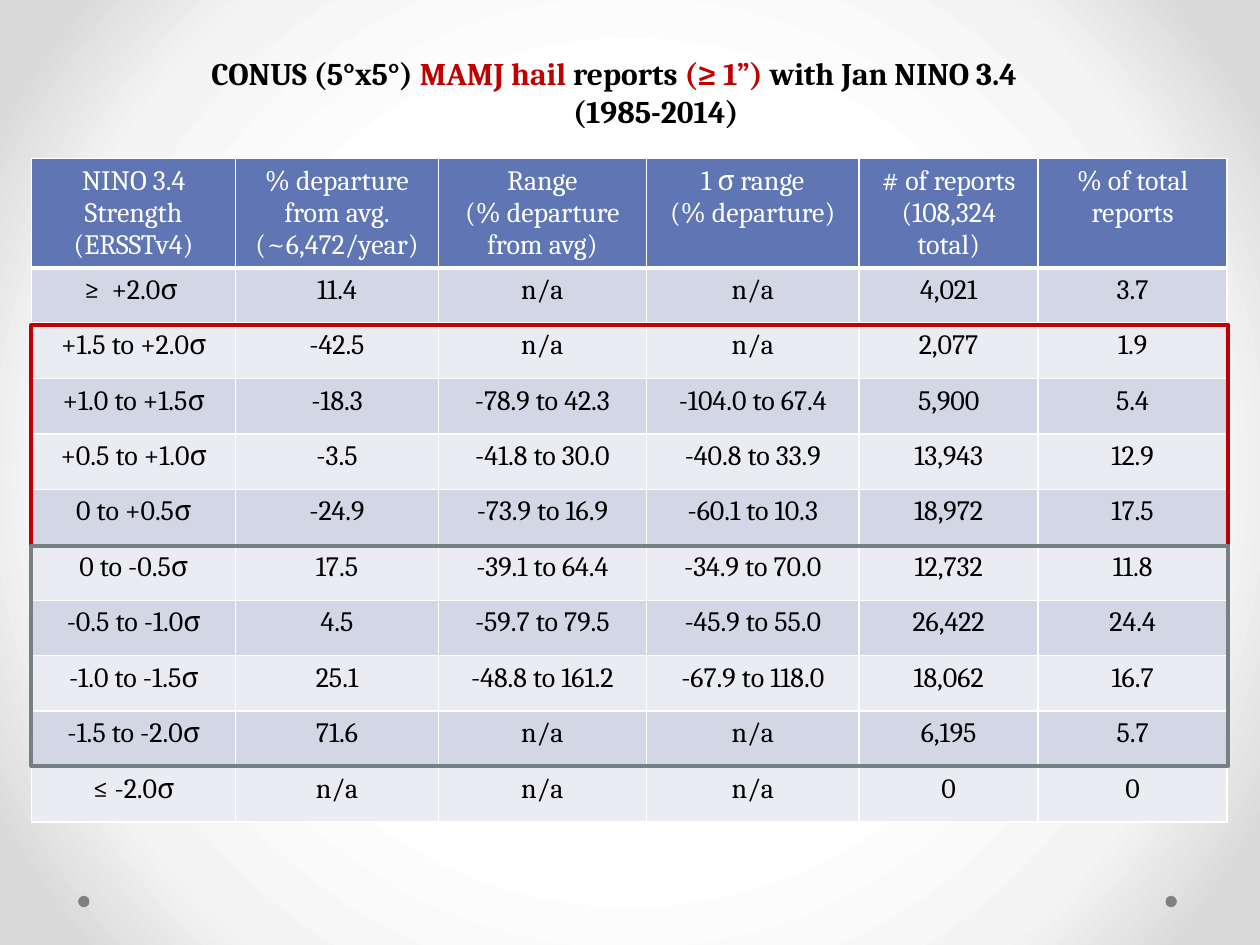
import pptx
import pptx.dml.color
import pptx.enum.shapes
import pptx.enum.text
import pptx.oxml
import pptx.oxml.ns
import pptx.util

Inches, Pt = pptx.util.Inches, pptx.util.Pt
CENTER = pptx.enum.text.PP_ALIGN.CENTER
SHAPES = pptx.enum.shapes.MSO_SHAPE
FONT = "Cambria"
COLORS = {
    "white": "FFFFFF", "pale": "F4F4F4", "edge": "DADADA", "dot": "808080",
    "header": "6076B4", "odd": "D2D6E5", "even": "EAECF2",
    "black": "000000", "red": "C00000", "slate": "758085",
}
NS = pptx.oxml.ns.nsdecls("a")


def rgb(name):
    return pptx.dml.color.RGBColor.from_string(COLORS[name])


def style_run(run, size, color, bold=False):
    run.font.name, run.font.size, run.font.bold = FONT, Pt(size), bold
    run.font.color.rgb = rgb(color)


deck = pptx.Presentation()
deck.slide_width, deck.slide_height = Inches(10), Inches(7.5)
slide = deck.slides.add_slide(deck.slide_layouts[6])

# Radial background
slide.background.fill.gradient()
gradient = slide.element.xpath(".//p:bg//a:gradFill")[0]
for part in list(gradient):
    gradient.remove(part)
stops = "".join(
    f'<a:gs pos="{share * 1000}"><a:srgbClr val="{COLORS[color]}"/></a:gs>'
    for share, color in ((50, "white"), (76, "pale"), (92, "edge")))
gradient.append(pptx.oxml.parse_xml(f"<a:gsLst {NS}>{stops}</a:gsLst>"))
gradient.append(pptx.oxml.parse_xml(
    f'<a:path {NS} path="circle">'
    '<a:fillToRect l="50000" t="50000" r="50000" b="50000"/></a:path>'))

# Footer dots
for left in (9.25, 0.62):
    dot = slide.shapes.add_shape(
        SHAPES.OVAL, Inches(left), Inches(7.11), Inches(0.09), Inches(0.09))
    dot.shadow.inherit = False
    dot.fill.solid()
    dot.fill.fore_color.rgb = rgb("dot")
    dot.line.fill.background()

# Hail report table
rows = [
    ("NINO 3.4 Strength\n(ERSSTv4)", "% departure from avg.\n(~6,472/year)",
     "Range\n(% departure from avg)", "1 σ range\n(% departure)",
     "# of reports\n(108,324 total)", "% of total reports"),
    ("≥  +2.0σ ", "11.4", "n/a", "n/a", "4,021", "3.7"),
    ("+1.5 to +2.0σ", "-42.5", "n/a", "n/a", "2,077", "1.9"),
    ("+1.0 to +1.5σ", "-18.3", "-78.9 to 42.3", "-104.0 to 67.4", "5,900", "5.4"),
    ("+0.5 to +1.0σ", "-3.5", "-41.8 to 30.0", "-40.8 to 33.9", "13,943", "12.9"),
    ("0 to +0.5σ", "-24.9", "-73.9 to 16.9", "-60.1 to 10.3", "18,972", "17.5"),
    ("0 to -0.5σ", "17.5", "-39.1 to 64.4", "-34.9 to 70.0", "12,732", "11.8"),
    ("-0.5 to -1.0σ", "4.5", "-59.7 to 79.5", "-45.9 to 55.0", "26,422", "24.4"),
    ("-1.0 to -1.5σ", "25.1", "-48.8 to 161.2", "-67.9 to 118.0", "18,062", "16.7"),
    ("-1.5 to -2.0σ", "71.6", "n/a", "n/a", "6,195", "5.7"),
    ("≤ -2.0σ", "n/a", "n/a", "n/a", "0", "0"),
]
column_widths = (1.62, 1.61, 1.65, 1.69, 1.42, 1.5)
table_left, table_width = Inches(0.25), Inches(9.5)
reports = slide.shapes.add_table(
    len(rows), len(column_widths), table_left, Inches(1.26),
    table_width, Inches(5.31)).table
for column, width in zip(reports.columns, column_widths):
    column.width = Inches(width)

for r, values in enumerate(rows):
    reports.rows[r].height = Inches(0.44 if r else 0.76)
    band = "header" if r == 0 else ("odd" if r % 2 else "even")
    for c, value in enumerate(values):
        cell = reports.cell(r, c)
        cell.fill.solid()
        cell.fill.fore_color.rgb = rgb(band)
        cell.text_frame.text = value
        for paragraph in cell.text_frame.paragraphs:
            paragraph.alignment = CENTER
            style_run(paragraph.runs[0], 16, "black" if r else "white")
        borders = cell._tc.get_or_add_tcPr()
        for place, side in enumerate("LRTB"):
            weight = Pt(3 if r == 0 and side == "B" else 1)
            borders.insert(place, pptx.oxml.parse_xml(
                f'<a:ln{side} {NS} w="{weight}"><a:solidFill>'
                f'<a:srgbClr val="{COLORS["white"]}"/></a:solidFill></a:ln{side}>'))

# Title
title = slide.shapes.add_textbox(
    Inches(1.58), Inches(0.38), Inches(7.25), Inches(0.71)).text_frame
title.word_wrap = True
subject = title.paragraphs[0]
for words, color in (("CONUS (5°x5°) ", "black"), ("MAMJ hail ", "red"),
                     ("reports ", "black"), ("(≥ 1”) ", "red"),
                     ("with Jan NINO 3.4", "black")):
    run = subject.add_run()
    run.text = words
    style_run(run, 18, color, bold=True)
years = title.add_paragraph()
years.text = "(1985-2014)"
years.alignment = CENTER
style_run(years.runs[0], 18, "black", bold=True)

# Frames around the warm and the cool phases
frame_height = 1.75
for phase, color in enumerate(("red", "slate")):
    frame = slide.shapes.add_shape(
        SHAPES.RECTANGLE, table_left, Inches(2.58 + phase * frame_height),
        table_width, Inches(frame_height))
    frame.shadow.inherit = False
    frame.fill.background()
    frame.line.color.rgb = rgb(color)
    frame.line.width = Pt(2.25)

deck.save("out.pptx")
